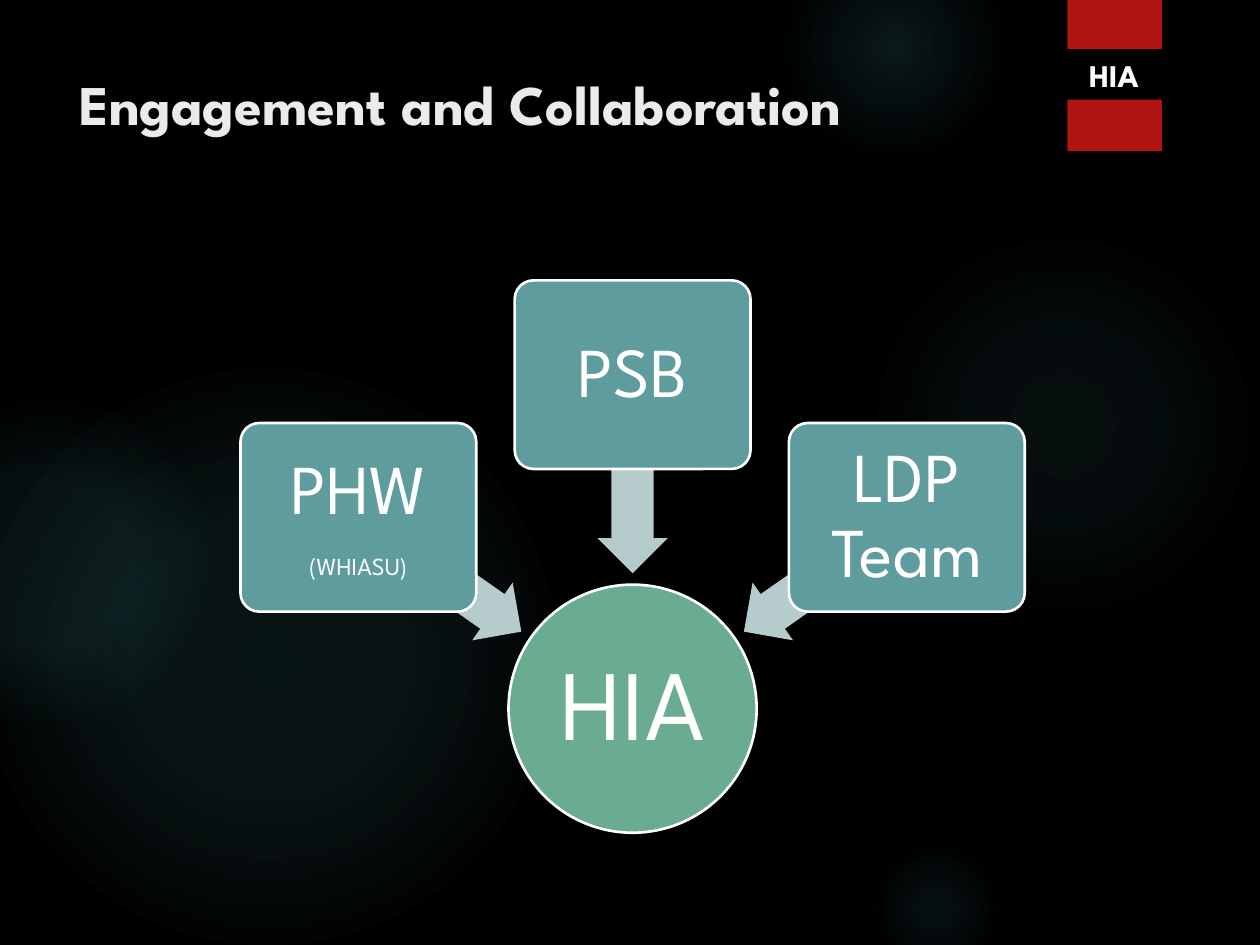
from lxml.etree import SubElement
from pptx import Presentation
from pptx.dml.color import RGBColor
from pptx.enum.shapes import MSO_SHAPE as Shape
from pptx.enum.text import MSO_ANCHOR as Anchor, PP_ALIGN as Align
from pptx.oxml.ns import qn
from pptx.util import Pt

FONT = "League Spartan"
WHITE = "FFFFFF"
CENTER_X = 361.5
BOX_WIDTH, BOX_HEIGHT = 134.8, 107.8
ARROW_LENGTH, ARROW_HEIGHT = 113.8, 40.3
HUB_TOP, HUB_SIZE = 334.1, 141.8

# Left, top, diameter, then (position %, opacity %) stops
GLOWS = [
    (496, 131.8, 221.8, [(0, 7), (36, 6), (69, 0)]),
    (448, -36, 126, [(0, 14), (36, 7), (73, 0)]),
    (496, 480, 78, [(0, 9), (36, 5), (66, 0)]),
    (-12, 210, 330, [(0, 11), (36, 10), (75, 0)]),
    (-66, 228, 186, [(0, 8), (36, 8), (72, 0)]),
]

# Box offset from centre, box top, arrow offset, arrow middle, rotation, lines
PARTNERS = [
    (-156.7, 241.7, -110.2, 328.3, 215, [("PHW", 40), ("(WHIASU)", 14)]),
    (0, 160.2, 0, 270.7, 270, [("PSB", 40)]),
    (156.7, 241.7, 110.2, 328.3, 325, [("LDP Team", 40)]),
]


def color(value):
    return RGBColor.from_string(value)


def add_shape(page, kind, left, top, width, height, fill=None, line=None):
    shape = page.shapes.add_shape(kind, Pt(left), Pt(top), Pt(width), Pt(height))
    shape.shadow.inherit = False
    if fill:
        shape.fill.solid()
        shape.fill.fore_color.rgb = color(fill)
    if line:
        shape.line.color.rgb = color(line)
        shape.line.width = Pt(1.5)
    else:
        shape.line.fill.background()
    return shape


def add_glow(page, left, top, size, stops):
    glow = add_shape(page, Shape.OVAL, left, top, size, size)
    glow.fill.gradient()
    gradient = glow.fill._xPr.find(qn("a:gradFill"))
    for child in list(gradient):
        gradient.remove(child)
    stop_list = SubElement(gradient, qn("a:gsLst"))
    for position, opacity in stops:
        stop = SubElement(stop_list, qn("a:gs"), pos=str(position * 1000))
        tint = SubElement(stop, qn("a:srgbClr"), val="50B9C1")
        SubElement(tint, qn("a:alpha"), val=str(opacity * 1000))
    path = SubElement(gradient, qn("a:path"), {"path": "circle"})
    SubElement(path, qn("a:fillToRect"), dict.fromkeys("ltrb", "50000"))


def add_span(para, text, size, ink=WHITE, bold=False):
    span = para.add_run()
    span.text = text
    span.font.name = FONT
    span.font.size = Pt(size)
    span.font.bold = bold
    span.font.color.rgb = color(ink)


def write_centered(shape, lines, inset):
    frame = shape.text_frame
    frame.word_wrap = True
    frame.vertical_anchor = Anchor.MIDDLE
    frame.margin_left = frame.margin_right = Pt(inset)
    frame.margin_top = frame.margin_bottom = Pt(inset)
    for index, (text, size) in enumerate(lines):
        para = frame.add_paragraph() if index else frame.paragraphs[0]
        para.alignment = Align.CENTER
        para.line_spacing = 0.9
        if index < len(lines) - 1:
            para.space_after = Pt(size * 0.35)
        add_span(para, text, size)


def add_partner(page, offset, top, arrow_offset, arrow_middle, rotation, lines):
    arrow = add_shape(page, Shape.LEFT_ARROW,
                      CENTER_X + arrow_offset - ARROW_LENGTH / 2,
                      arrow_middle - ARROW_HEIGHT / 2,
                      ARROW_LENGTH, ARROW_HEIGHT, "B6CBCC")
    arrow.adjustments[0] = 0.6
    arrow.adjustments[1] = 0.5
    arrow.rotation = rotation
    box = add_shape(page, Shape.ROUNDED_RECTANGLE,
                    CENTER_X + offset - BOX_WIDTH / 2, top,
                    BOX_WIDTH, BOX_HEIGHT, "5F9C9D", WHITE)
    box.adjustments[0] = 0.1
    write_centered(box, lines, 5.6)


def add_title(page, text):
    box = page.shapes.add_textbox(Pt(38.2), Pt(36), Pt(555.8), Pt(110.2))
    box.text_frame.word_wrap = True
    add_span(box.text_frame.paragraphs[0], text, 32, "EBEBEB", True)


def add_label(page, text):
    label = add_shape(page, Shape.RECTANGLE, 609.1, 28, 54.8, 29, "000000")
    label.text_frame.vertical_anchor = Anchor.MIDDLE
    para = label.text_frame.paragraphs[0]
    para.alignment = Align.CENTER
    add_span(para, text, 18, bold=True)


def main():
    deck = Presentation()
    deck.slide_width, deck.slide_height = Pt(720), Pt(540)
    page = deck.slides.add_slide(deck.slide_layouts[6])

    # Background with soft glows and the red tab
    page.background.fill.solid()
    page.background.fill.fore_color.rgb = color("000000")
    for glow in GLOWS:
        add_glow(page, *glow)
    add_shape(page, Shape.RECTANGLE, 609.9, 0, 54, 86.4, "B01513")

    add_title(page, "Engagement and Collaboration")

    # Hub and the partners pointing to it
    hub = add_shape(page, Shape.OVAL, CENTER_X - HUB_SIZE / 2, HUB_TOP,
                    HUB_SIZE, HUB_SIZE, "6AAC90", WHITE)
    write_centered(hub, [("HIA", 57)], 2.9)
    for partner in PARTNERS:
        add_partner(page, *partner)

    add_label(page, "HIA")
    deck.save("out.pptx")


if __name__ == "__main__":
    main()
